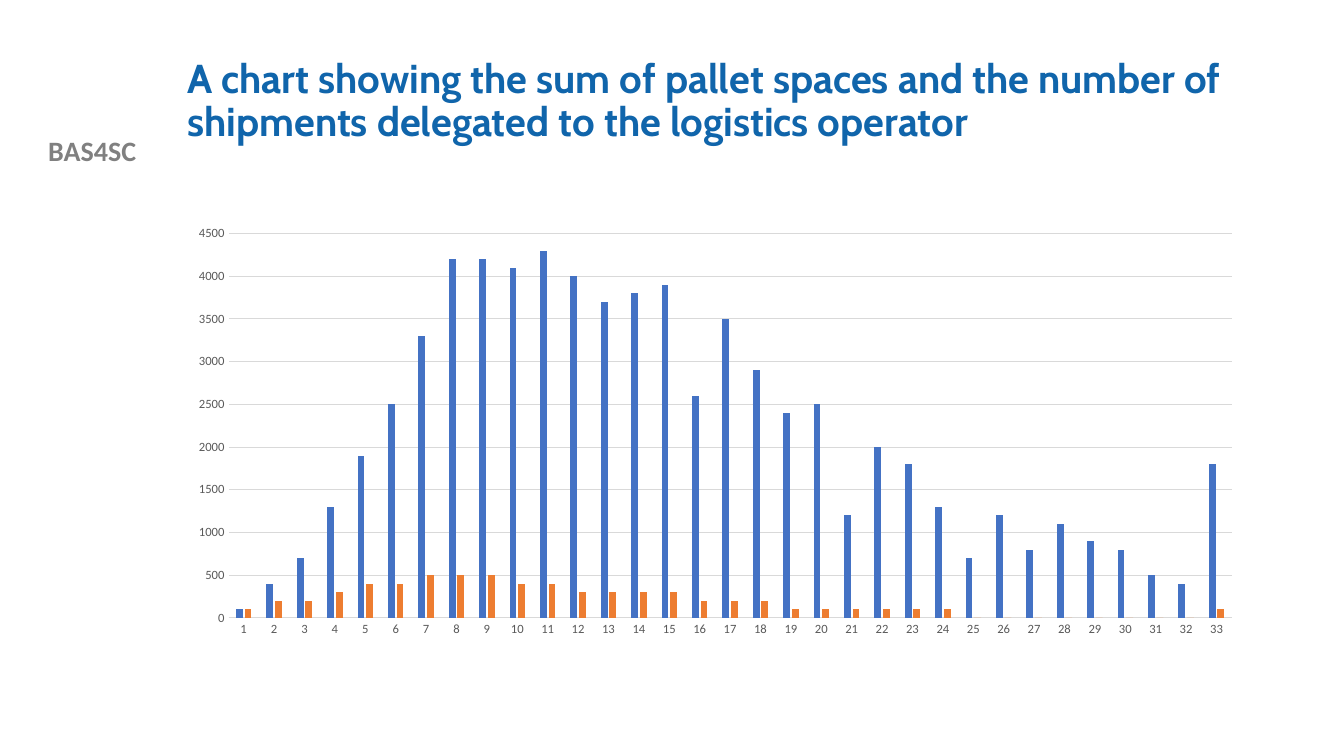
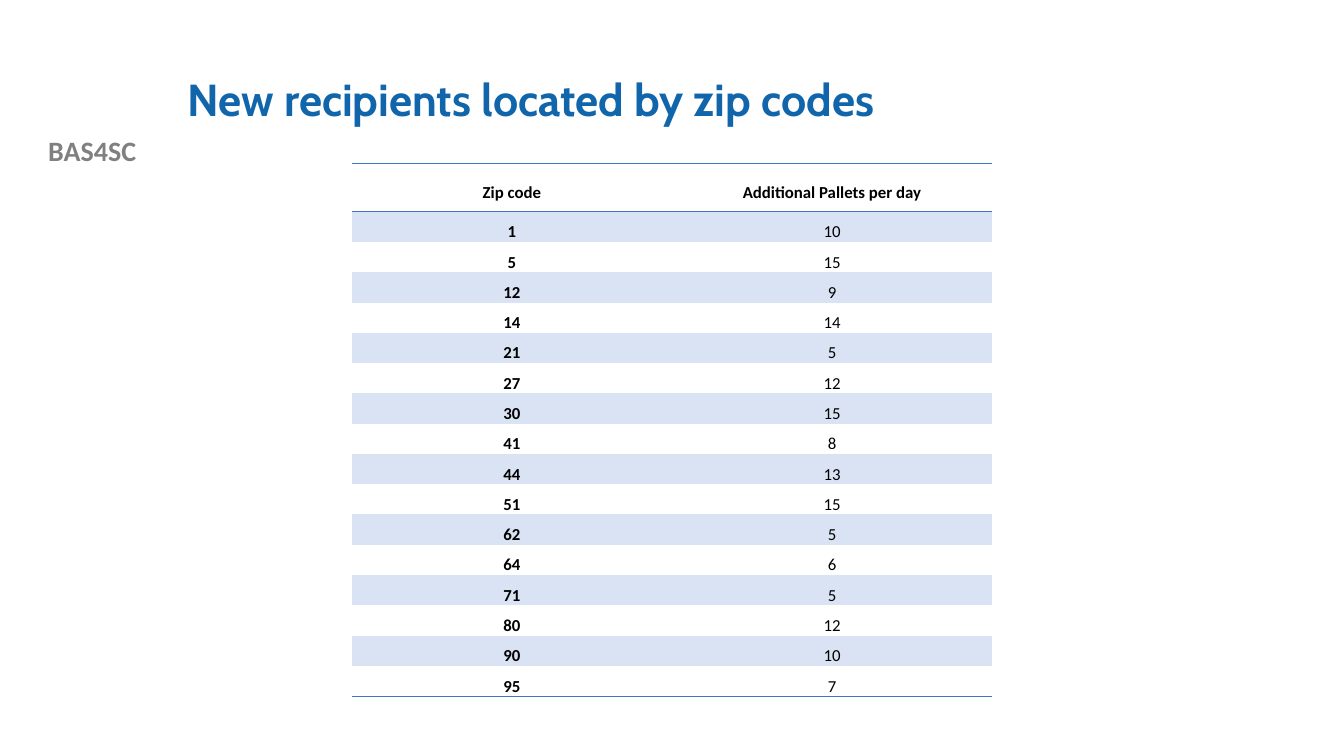
"""Builds two slides: a shipment chart and a table of new recipients."""
from lxml.etree import SubElement
from pptx import Presentation
from pptx.chart.data import CategoryChartData
from pptx.dml.color import RGBColor
from pptx.enum.chart import XL_CHART_TYPE, XL_TICK_MARK
from pptx.enum.text import MSO_ANCHOR, PP_ALIGN
from pptx.oxml import parse_xml
from pptx.oxml.ns import nsdecls, qn
from pptx.util import Inches, Pt

TITLE_BLUE = RGBColor(0x10, 0x65, 0xAB)
BLUE = RGBColor(0x44, 0x72, 0xC4)
ORANGE = RGBColor(0xED, 0x7D, 0x31)
BAND = RGBColor(0xDA, 0xE3, 0xF3)
BLACK = RGBColor(0, 0, 0)
LABEL_GREY = RGBColor(0x80, 0x80, 0x80)
AXIS_GREY = RGBColor(0x59, 0x59, 0x59)
GRID_GREY = RGBColor(0xD9, 0xD9, 0xD9)
NO_STYLE = "{2D5ABB26-0587-4C30-8999-92F81FD0307C}"

TITLES = [
    ("A chart showing the sum of pallet spaces and the number of shipments "
     "delegated to the logistics operator", 28.8),
    ("New recipients located by zip codes", 32),
]
SERIES = [
    ("Series 1", BLUE,
     [100, 400, 700, 1300, 1900, 2500, 3300, 4200, 4200, 4100, 4300,
      4000, 3700, 3800, 3900, 2600, 3500, 2900, 2400, 2500, 1200, 2000,
      1800, 1300, 700, 1200, 800, 1100, 900, 800, 500, 400, 1800]),
    ("Series 2", ORANGE,
     [100, 200, 200, 300, 400, 400, 500, 500, 500, 400, 400,
      300, 300, 300, 300, 200, 200, 200, 100, 100, 100, 100,
      100, 100, 0, 0, 0, 0, 0, 0, 0, 0, 100]),
]
ROWS = [
    ("Zip code", "Additional Pallets per day"),
    (1, 10), (5, 15), (12, 9), (14, 14), (21, 5), (27, 12), (30, 15), (41, 8),
    (44, 13), (51, 15), (62, 5), (64, 6), (71, 5), (80, 12), (90, 10), (95, 7),
]


def write(tf, text, size, color, font="Calibri", bold=True,
          align=PP_ALIGN.CENTER, spacing=None, after=None):
    tf.word_wrap = True
    p = tf.paragraphs[0]
    p.alignment, p.line_spacing = align, spacing
    if after is not None:
        p.space_after = Pt(after)
    r = p.add_run()
    r.text = text
    r.font.size, r.font.name, r.font.bold = Pt(size), font, bold
    r.font.color.rgb = color


def add_border(cell, side, width):
    tcPr = cell._tc.get_or_add_tcPr()
    ln = parse_xml(f'<a:{side} {nsdecls("a")} w="{Pt(width)}"/>')
    fill = SubElement(ln, qn("a:solidFill"))
    SubElement(fill, qn("a:srgbClr"), val=str(BLUE))
    tcPr.append(ln)


prs = Presentation()
prs.slide_width, prs.slide_height = Inches(13.33), Inches(7.5)

slides = []
for title, size in TITLES:
    s = prs.slides.add_slide(prs.slide_layouts[6])
    slides.append(s)
    sp = s.shapes.add_textbox(Inches(0), Inches(1.28), Inches(1.83), Inches(0.44))
    write(sp.text_frame, "BAS4SC", 20, LABEL_GREY)
    sp = s.shapes.add_textbox(Inches(1.76), Inches(0.4), Inches(10.66), Inches(1.22))
    sp.text_frame.vertical_anchor = MSO_ANCHOR.MIDDLE
    write(sp.text_frame, title, size, TITLE_BLUE, font="Cabin",
          align=PP_ALIGN.LEFT, spacing=0.9)

chart_slide, table_slide = slides

data = CategoryChartData()
data.categories = [str(n) for n in range(1, 34)]
for name, color, values in SERIES:
    data.add_series(name, values)
chart = chart_slide.shapes.add_chart(
    XL_CHART_TYPE.COLUMN_CLUSTERED, Inches(1.76), Inches(2.16),
    Inches(10.67), Inches(4.24), data).chart
chart.has_legend = chart.has_title = False
chart.font.size, chart.font.name = Pt(10), "Calibri"
chart.font.color.rgb = BLACK

plot = chart.plots[0]
plot.gap_width, plot.overlap, plot.vary_by_categories = 219, -27, False
for series, (name, color, values) in zip(plot.series, SERIES):
    series.format.fill.solid()
    series.format.fill.fore_color.rgb = color

for axis in (chart.category_axis, chart.value_axis):
    axis.major_tick_mark = axis.minor_tick_mark = XL_TICK_MARK.NONE
    font = axis.tick_labels.font
    font.size, font.name, font.color.rgb = Pt(9), "Calibri", AXIS_GREY
chart.value_axis.minimum_scale, chart.value_axis.maximum_scale = 0, 4500
chart.value_axis.major_unit = 500
chart.value_axis.has_major_gridlines = True
chart.value_axis.format.line.fill.background()
for line in (chart.category_axis.format.line,
             chart.value_axis.major_gridlines.format.line):
    line.color.rgb, line.width = GRID_GREY, Pt(0.75)

table = table_slide.shapes.add_table(
    len(ROWS), 2, Inches(3.49), Inches(1.62), Inches(6.35), Inches(5.13)).table
table.first_row = table.horz_banding = False
table._tbl.tblPr.find(qn("a:tableStyleId")).text = NO_STYLE
for i, values in enumerate(ROWS):
    header = i == 0
    table.rows[i].height = Inches(0.48 if header else 0.29)
    for j, value in enumerate(values):
        cell = table.cell(i, j)
        cell.margin_left = cell.margin_right = 0
        cell.margin_top = cell.margin_bottom = 0
        cell.vertical_anchor = MSO_ANCHOR.MIDDLE if header else MSO_ANCHOR.BOTTOM
        write(cell.text_frame, str(value), 12, BLACK,
              bold=header or j == 0, spacing=1.5, after=6)
        if header:
            add_border(cell, "lnT", 1)
        if header or i == len(ROWS) - 1:
            add_border(cell, "lnB", 1)
        if i % 2:
            cell.fill.solid()
            cell.fill.fore_color.rgb = BAND
        else:
            cell.fill.background()

prs.save("out.pptx")
